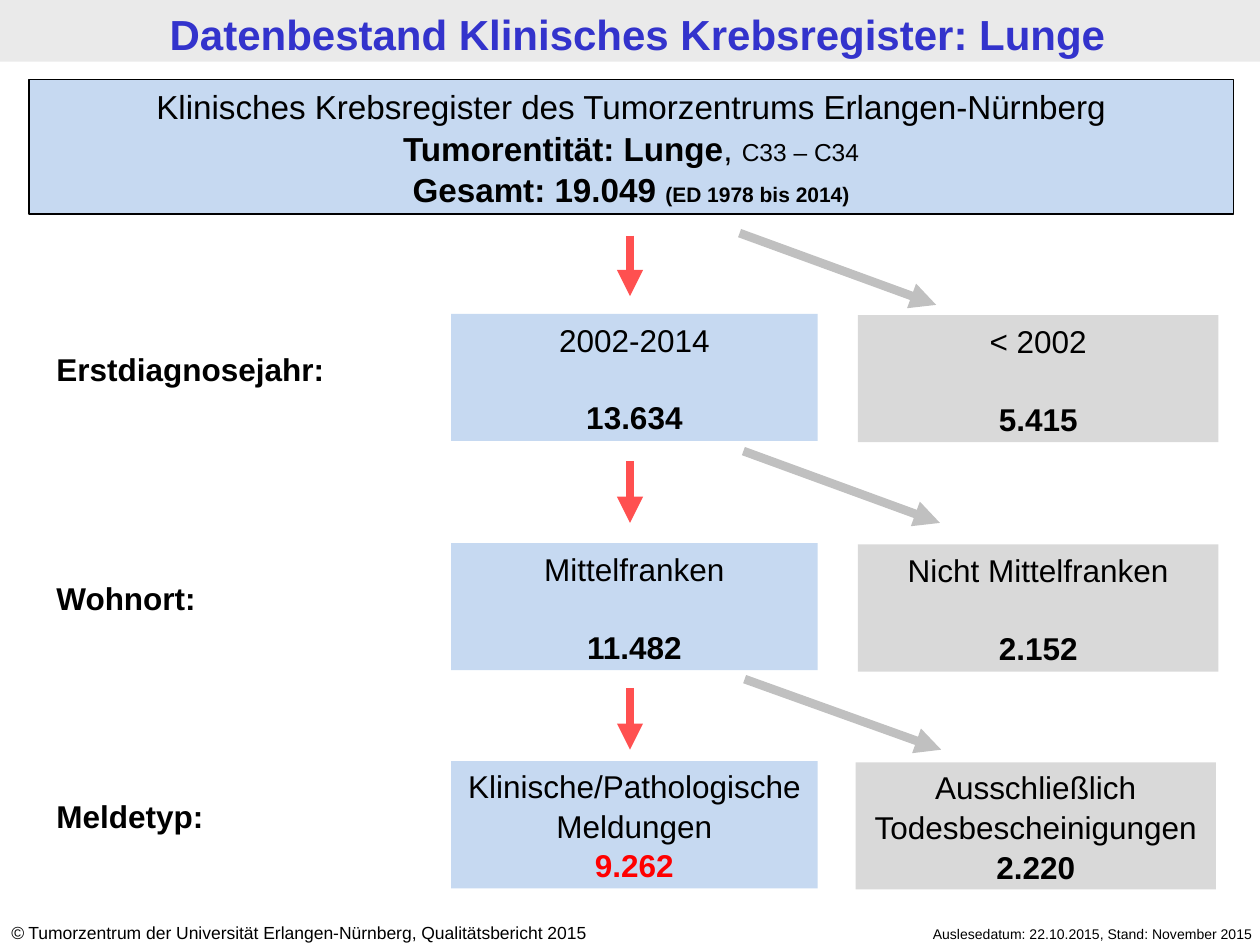
from lxml import etree
from pptx import Presentation
from pptx.dml.color import RGBColor
from pptx.enum.shapes import MSO_CONNECTOR, MSO_SHAPE
from pptx.enum.text import MSO_ANCHOR, PP_ALIGN
from pptx.oxml.ns import qn
from pptx.util import Inches, Pt

STRAIGHT = MSO_CONNECTOR.STRAIGHT
RECTANGLE = MSO_SHAPE.RECTANGLE
MIDDLE = MSO_ANCHOR.MIDDLE
LEFT, CENTER, RIGHT = PP_ALIGN.LEFT, PP_ALIGN.CENTER, PP_ALIGN.RIGHT

BLACK = RGBColor(0x00, 0x00, 0x00)
BLUE = RGBColor(0x33, 0x33, 0xCC)
LIGHT_BLUE = RGBColor(0xC6, 0xD9, 0xF1)
GRAY = RGBColor(0xD9, 0xD9, 0xD9)
ARROW_GRAY = RGBColor(0xC0, 0xC0, 0xC0)
ARROW_RED = RGBColor(0xFF, 0x50, 0x50)
RED = RGBColor(0xFF, 0x00, 0x00)
BAR_GRAY = RGBColor(0xEA, 0xEA, 0xEA)

presentation = Presentation()
presentation.slide_width = Inches(10)
presentation.slide_height = Inches(7.5)
slide = presentation.slides.add_slide(presentation.slide_layouts[5])
shapes = slide.shapes


def write(shape, paragraphs, alignment):
    """Fill a shape with paragraphs, each a list of (text, size, bold, color)."""
    frame = shape.text_frame
    frame.word_wrap = True
    frame.vertical_anchor = MIDDLE
    for index, runs in enumerate(paragraphs):
        paragraph = frame.add_paragraph() if index else frame.paragraphs[0]
        paragraph.alignment = alignment
        paragraph.line_spacing = 1.05
        for text, size, bold, color in runs:
            run = paragraph.add_run()
            run.text = text
            run.font.name = "Arial"
            run.font.size = Pt(size)
            run.font.bold = bold
            run.font.color.rgb = color


def add_box(left, top, width, height, fill):
    box = shapes.add_shape(RECTANGLE, Inches(left), Inches(top), Inches(width), Inches(height))
    box.shadow.inherit = False
    box.fill.solid()
    box.fill.fore_color.rgb = fill
    box.line.fill.background()
    return box


# Title on its gray bar
title_bar = add_box(0, 0, 10, 0.49, BAR_GRAY)
title = shapes.title
title.left, title.top = Inches(0.06), Inches(0.01)
title.width, title.height = Inches(10), Inches(0.49)
write(title, [[("Datenbestand Klinisches Krebsregister: Lunge", 24, True, BLUE)]], CENTER)
title._element.addprevious(title_bar._element)

# Register overview
overview = add_box(0.23, 0.63, 9.56, 1.07, LIGHT_BLUE)
overview.line.color.rgb = BLACK
overview.line.width = Pt(0.75)
write(overview, [
    [("Klinisches Krebsregister des Tumorzentrums Erlangen-Nürnberg", 19, False, BLACK)],
    [("Tumorentität: Lunge", 19, True, BLACK), (", ", 19, False, BLACK),
     ("C33 – C34", 14, False, BLACK)],
    [("Gesamt: 19.049 ", 19, True, BLACK), ("(ED 1978 bis 2014)", 12, True, BLACK)],
], CENTER)

# Filter steps: box top, label, kept group, excluded group (left, name, count)
steps = [
    (2.49, "Erstdiagnosejahr:", "2002-2014", "13.634", BLACK, 6.81, "< 2002", "5.415"),
    (4.31, "Wohnort:", "Mittelfranken", "11.482", BLACK, 6.81, "Nicht Mittelfranken", "2.152"),
    (6.04, "Meldetyp:", "Klinische/Pathologische Meldungen", "9.262", RED,
     6.79, "Ausschließlich Todesbescheinigungen", "2.220"),
]
for top, label, kept, kept_count, kept_color, excluded_left, excluded, excluded_count in steps:
    label_box = shapes.add_textbox(Inches(0.35), Inches(top + 0.23), Inches(2.76), Inches(0.4))
    write(label_box, [[(label, 18, True, BLACK)]], LEFT)
    groups = [
        (3.58, top, 2.91, LIGHT_BLUE, kept, kept_count, kept_color),
        (excluded_left, top + 0.01, 2.86, GRAY, excluded, excluded_count, BLACK),
    ]
    for left, box_top, width, fill, name, count, color in groups:
        box = add_box(left, box_top, width, 1.01, fill)
        write(box, [[(name, 18, False, BLACK)], [(count, 18, True, color)]], CENTER)
        if len(name) < 20:  # one-line names leave a line free above the count
            box.text_frame.paragraphs[1].space_before = Pt(21.7)

# Arrows into each step: start x, start y, end x, end y
arrows = [
    (5, 1.87, 5, 2.35, ARROW_RED),
    (5, 3.66, 5, 4.15, ARROW_RED),
    (5, 5.46, 5, 5.95, ARROW_RED),
    (5.87, 1.85, 7.43, 2.42, ARROW_GRAY),
    (5.9, 3.58, 7.46, 4.15, ARROW_GRAY),
    (5.91, 5.39, 7.47, 5.95, ARROW_GRAY),
]
for start_x, start_y, end_x, end_y, color in arrows:
    arrow = shapes.add_connector(
        STRAIGHT, Inches(start_x), Inches(start_y), Inches(end_x), Inches(end_y))
    arrow.line.color.rgb = color
    arrow.line.width = Pt(5)
    etree.SubElement(arrow.line._get_or_add_ln(), qn("a:tailEnd"), type="triangle")
    etree.SubElement(arrow._element.spPr, qn("a:effectLst"))

# Footer
date_box = shapes.add_textbox(Inches(6.65), Inches(7.29), Inches(3.39), Inches(0.24))
write(date_box, [[("Auslesedatum: 22.10.2015, Stand: November 2015", 8, False, BLACK)]], RIGHT)
source_box = shapes.add_textbox(Inches(-0.01), Inches(7.26), Inches(5.24), Inches(0.27))
write(source_box, [[
    ("©", 10, False, BLACK),
    (" Tumorzentrum der Universität Erlangen-Nürnberg, Qualitätsbericht 2015", 10, False, BLACK),
]], LEFT)
source_box.text_frame.paragraphs[0].runs[0].font.italic = True

presentation.save("out.pptx")
